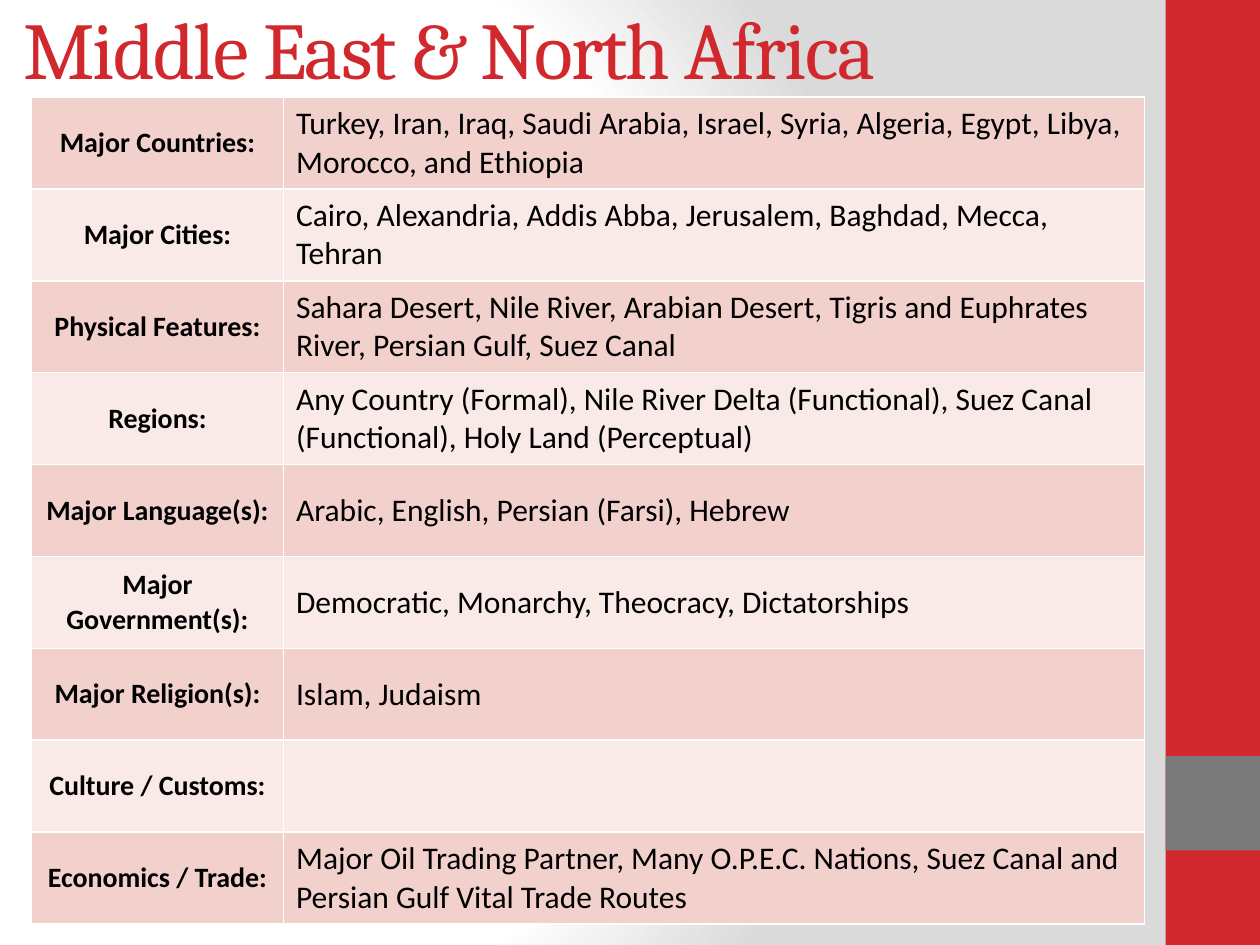
from pptx import Presentation
from pptx.dml.color import RGBColor
from pptx.enum.shapes import MSO_SHAPE
from pptx.enum.text import MSO_ANCHOR, MSO_AUTO_SIZE, PP_ALIGN
from pptx.oxml import parse_xml
from pptx.oxml.ns import nsdecls
from pptx.util import Pt

RECTANGLE = MSO_SHAPE.RECTANGLE
MIDDLE = MSO_ANCHOR.MIDDLE
LEFT, CENTER = PP_ALIGN.LEFT, PP_ALIGN.CENTER
NO_AUTOFIT = MSO_AUTO_SIZE.NONE

RED, GRAY, BLACK = "D1282E", "7A7A7A", "000000"
BAND_COLORS = ["F2D1CD", "F9EAE8"]
LABEL_FORMAT = {"name": "Calibri", "size": Pt(16), "bold": True}
DETAIL_FORMAT = {"name": "Calibri", "size": Pt(18), "bold": False}
TITLE_FORMAT = {"name": "Cambria", "size": Pt(46), "bold": False}

FACTS = [
    ("Major Countries:", "Turkey, Iran, Iraq, Saudi Arabia, Israel, Syria, Algeria, "
     "Egypt, Libya, Morocco, and Ethiopia"),
    ("Major Cities:", "Cairo, Alexandria, Addis Abba, Jerusalem, Baghdad, Mecca, Tehran"),
    ("Physical Features:", "Sahara Desert, Nile River, Arabian Desert, Tigris and "
     "Euphrates River, Persian Gulf, Suez Canal"),
    ("Regions:", "Any Country (Formal), Nile River Delta (Functional), Suez Canal "
     "(Functional), Holy Land (Perceptual)"),
    ("Major Language(s):", "Arabic, English, Persian (Farsi), Hebrew"),
    ("Major Government(s):", "Democratic, Monarchy, Theocracy, Dictatorships"),
    ("Major Religion(s):", "Islam, Judaism"),
    ("Culture / Customs:", ""),
    ("Economics / Trade:", "Major Oil Trading Partner, Many O.P.E.C. Nations, "
     "Suez Canal and Persian Gulf Vital Trade Routes"),
]


def color(hex_value):
    return RGBColor.from_string(hex_value)


def write(para, text, alignment, font_format, hex_value):
    """Fill a paragraph with one formatted span and return the span."""
    para.alignment = alignment
    span = para.add_run()
    span.text = text
    for name, value in font_format.items():
        setattr(span.font, name, value)
    span.font.color.rgb = color(hex_value)
    return span


deck = Presentation()
deck.slide_width, deck.slide_height = Pt(720), Pt(540)
page = deck.slides.add_slide(deck.slide_layouts[5])

# Background: circular gradient from white to light gray
stops = "".join(
    f'<a:gs pos="{position}000"><a:srgbClr val="{hex_value}"/></a:gs>'
    for position, hex_value in [(0, "FFFFFF"), (75, "FFFFFF"), (100, "DADADA")]
)
page.background.fill.solid()
background = page.element.cSld.bg.bgPr
background.replace(background[0], parse_xml(
    f'<a:gradFill {nsdecls("a")} rotWithShape="1"><a:gsLst>{stops}</a:gsLst>'
    '<a:path path="circle"><a:fillToRect l="20000" t="50000" r="100000" b="50000"/>'
    '</a:path></a:gradFill>'))

# Side band with its gray square
for top, height, hex_value in [(0, 540, RED), (432, 54, GRAY)]:
    band = page.shapes.add_shape(RECTANGLE, Pt(666), Pt(top), Pt(54), Pt(height))
    band.shadow.inherit = False
    band.fill.solid()
    band.fill.fore_color.rgb = color(hex_value)
    band.line.fill.background()

# Title
title = page.shapes.title
title.left, title.top, title.width, title.height = Pt(6), Pt(-18), Pt(600), Pt(90)
title.text_frame.auto_size = NO_AUTOFIT
title.text_frame.vertical_anchor = MIDDLE
title_span = write(title.text_frame.paragraphs[0], "Middle East & North Africa",
                   LEFT, TITLE_FORMAT, RED)
title_span.font._element.set("spc", "-100")

# Fact table
frame = page.shapes.add_table(len(FACTS), 2, Pt(18), Pt(55.5), Pt(636), Pt(472.5))
table = frame.table
table.first_row = False
table.horz_banding = False
table.columns[0].width, table.columns[1].width = Pt(144), Pt(492)

for row_index, fact in enumerate(FACTS):
    table.rows[row_index].height = Pt(52.5)
    for column_index, text in enumerate(fact):
        cell = table.cell(row_index, column_index)
        cell.vertical_anchor = MIDDLE
        cell.fill.solid()
        cell.fill.fore_color.rgb = color(BAND_COLORS[row_index % 2])
        properties = cell._tc.get_or_add_tcPr()
        for order, side in enumerate(["lnL", "lnR", "lnT", "lnB"]):
            properties.insert(order, parse_xml(
                f'<a:{side} {nsdecls("a")} w="12700"><a:solidFill>'
                f'<a:srgbClr val="FFFFFF"/></a:solidFill></a:{side}>'))
        if text:
            alignment, font_format = [(CENTER, LABEL_FORMAT),
                                      (LEFT, DETAIL_FORMAT)][column_index]
            write(cell.text_frame.paragraphs[0], text, alignment, font_format, BLACK)

deck.save("out.pptx")
